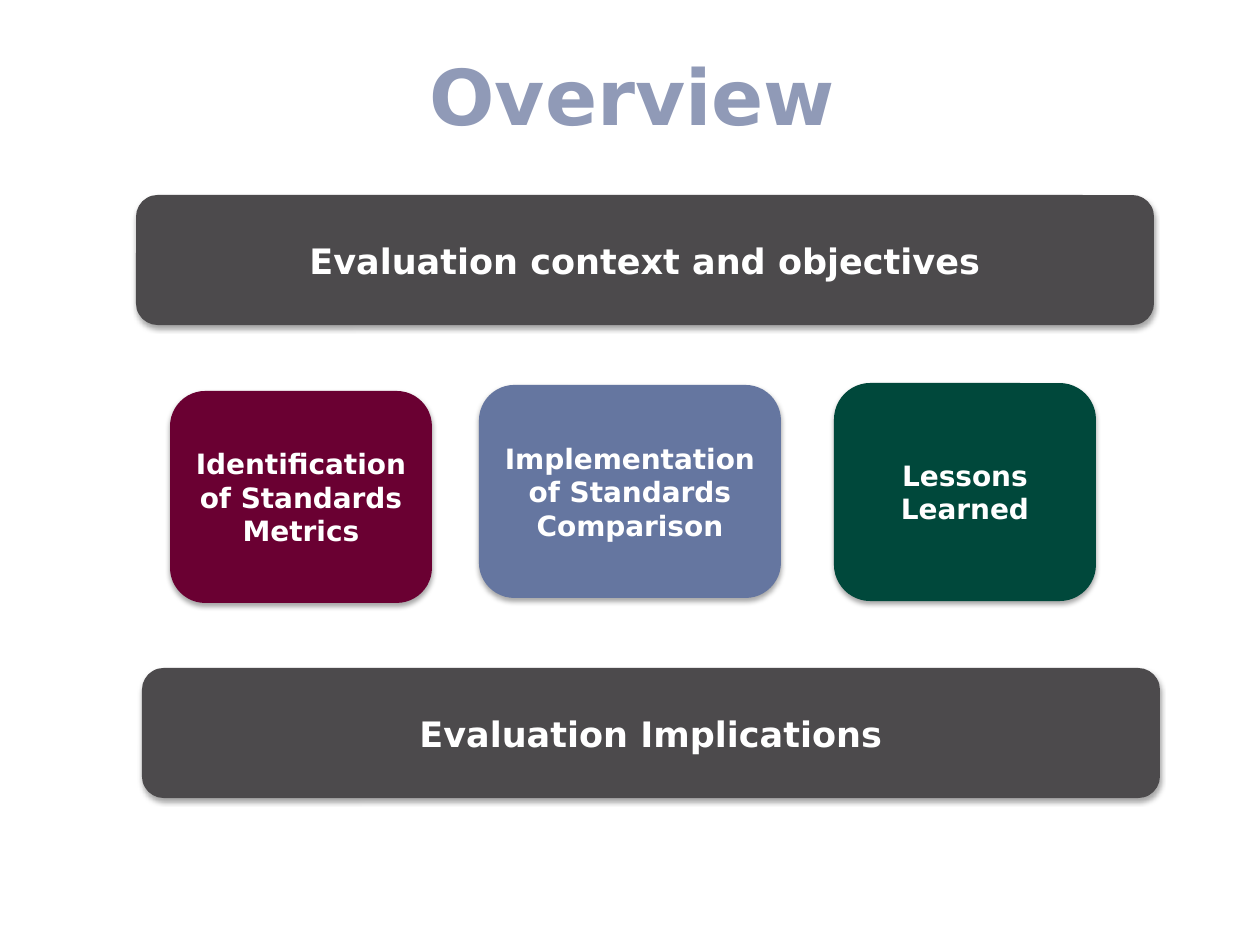
from lxml.etree import SubElement
from pptx import Presentation
from pptx.dml.color import RGBColor
from pptx.enum.shapes import MSO_SHAPE as Shape
from pptx.enum.text import MSO_ANCHOR as Anchor, PP_ALIGN as Align
from pptx.oxml.ns import qn
from pptx.util import Pt

PX = 914400 // 126
FONT = "DejaVu Sans"
COLORS = {
    "title": "909AB7",
    "text": "FFFFFF",
    "gray": "4C4A4C",
    "maroon": "6A0032",
    "blue": "6576A0",
    "green": "00483B",
    "shadow": "000000",
}


def write_centered(shape, text, size, color):
    frame = shape.text_frame
    frame.text = text
    frame.word_wrap = True
    frame.vertical_anchor = Anchor.MIDDLE
    para = frame.paragraphs[0]
    para.alignment = Align.CENTER
    para.font.name = FONT
    para.font.size = Pt(size)
    para.font.bold = True
    para.font.color.rgb = RGBColor.from_string(COLORS[color])


def add_soft_shadow(shape):
    shape.shadow.inherit = False
    effects = shape._element.spPr.find(qn("a:effectLst"))
    shadow = SubElement(effects, qn("a:outerShdw"), blurRad=str(Pt(3.1)),
                        dist=str(Pt(1.8)), dir="5400000", rotWithShape="0")
    color = SubElement(shadow, qn("a:srgbClr"), val=COLORS["shadow"])
    SubElement(color, qn("a:alpha"), val="35000")


deck = Presentation()
deck.slide_width = 1260 * PX
deck.slide_height = 945 * PX
page = deck.slides.add_slide(deck.slide_layouts[5])

title = page.shapes.title
title.left, title.top, title.width, title.height = (
    -34 * PX, 0, 1333 * PX, 189 * PX)
write_centered(title, "Overview", 44, "title")

# text, left, top, width, height, fill, text size
boxes = [
    ("Evaluation context and objectives", 136, 195, 1018, 130, "gray", 20),
    ("Identification of Standards Metrics", 170, 391, 262, 212, "maroon", 16),
    ("Implementation of Standards Comparison", 479, 385, 302, 213, "blue", 16),
    ("Lessons Learned", 834, 383, 262, 218, "green", 16),
    ("Evaluation Implications", 142, 668, 1018, 130, "gray", 20),
]
for text, left, top, width, height, fill, size in boxes:
    box = page.shapes.add_shape(Shape.ROUNDED_RECTANGLE, left * PX, top * PX,
                                width * PX, height * PX)
    box.fill.solid()
    box.fill.fore_color.rgb = RGBColor.from_string(COLORS[fill])
    box.line.fill.background()
    add_soft_shadow(box)
    write_centered(box, text, size, "text")

deck.save("out.pptx")
